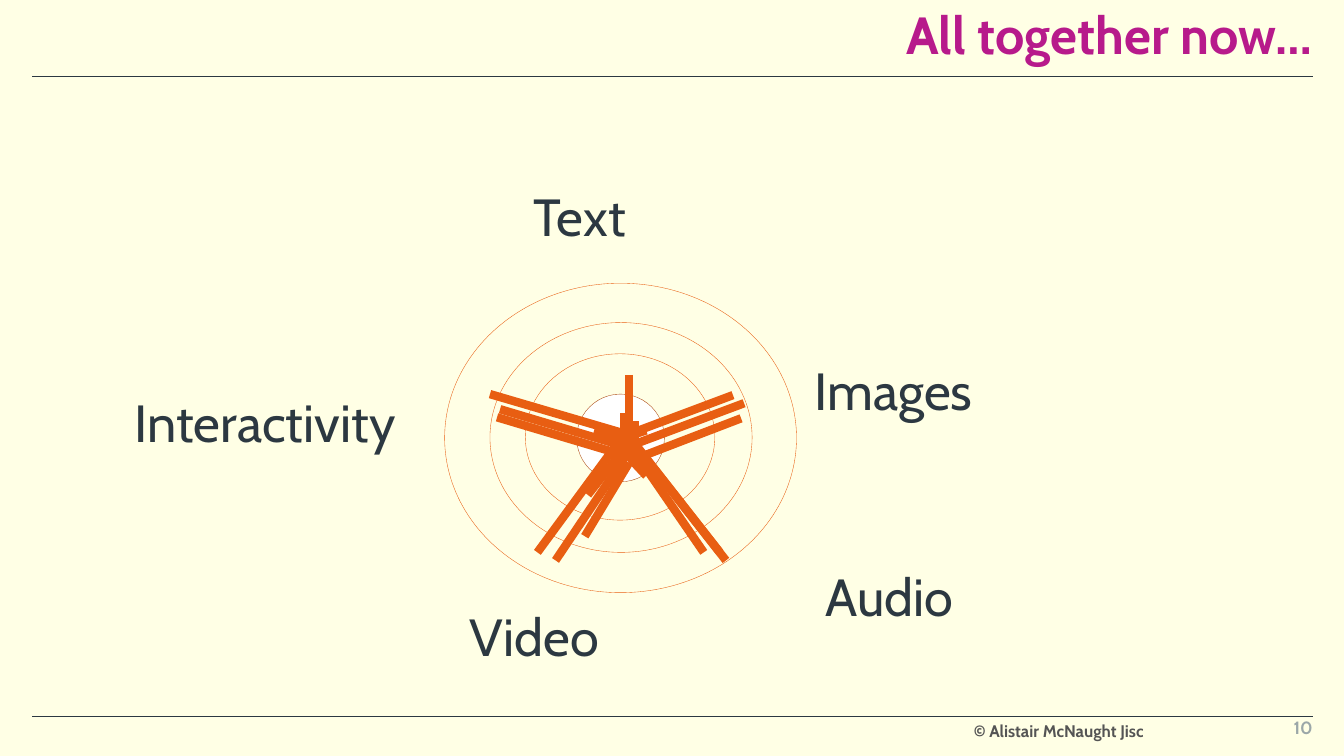
from typing import NamedTuple

from lxml import etree
from pptx import Presentation
from pptx import util as u
from pptx.dml.color import RGBColor
from pptx.enum import shapes, text
from pptx.oxml import ns

CREAM = RGBColor(0xFF, 0xFF, 0xE5)
SLATE = RGBColor(0x2C, 0x38, 0x41)
MAGENTA = RGBColor(0xB7, 0x1A, 0x8B)
ORANGE = RGBColor(0xE8, 0x5E, 0x12)
RUST = RGBColor(0xAC, 0x46, 0x0D)
WHITE = RGBColor(0xFF, 0xFF, 0xFF)
GREY = RGBColor(0x9B, 0xA7, 0xA8)
DARK_GREY = RGBColor(0x54, 0x54, 0x54)
FONT = "Cabin"


class Ring(NamedTuple):
    left: float
    top: float
    width: float
    height: float
    line: RGBColor = ORANGE
    fill: RGBColor | None = None


class Spoke(NamedTuple):
    x1: float
    y1: float
    x2: float
    y2: float


class Label(NamedTuple):
    wording: str
    left: float
    top: float
    width: float


RINGS = [
    Ring(5.72, 3.91, 0.87, 0.87, RUST, WHITE),
    Ring(4.86, 3.2, 2.6, 2.28),
    Ring(5.21, 3.51, 1.88, 1.65),
    Ring(4.41, 2.81, 3.49, 3.07),
]

# One row per profile: images, audio, video, interactivity, text
PROFILES = [
    [Spoke(6.15, 4.34, 7.27, 3.92), Spoke(6.19, 4.33, 6.98, 5.48),
     Spoke(5.33, 5.48, 6.16, 4.35), Spoke(4.86, 3.91, 6.19, 4.3),
     Spoke(6.19, 4.1, 6.19, 4.3)],
    [Spoke(6.2, 4.34, 6.41, 4.27), Spoke(6.24, 4.33, 7.14, 5.48),
     Spoke(5.83, 4.91, 6.27, 4.35), Spoke(5.89, 4.28, 6.24, 4.38),
     Spoke(6.24, 3.72, 6.24, 4.3)],
    [Spoke(6.26, 4.42, 7.38, 4), Spoke(6.3, 4.41, 7.2, 5.56),
     Spoke(5.51, 5.56, 6.27, 4.43), Spoke(4.96, 4.06, 6.3, 4.46),
     Spoke(6.3, 4.18, 6.3, 4.38)],
    [Spoke(6.23, 4.58, 7.35, 4.15), Spoke(6.27, 4.57, 6.41, 4.72),
     Spoke(5.8, 5.32, 6.24, 4.59), Spoke(4.93, 4.14, 6.27, 4.54),
     Spoke(6.27, 4.34, 6.27, 4.54)],
]

MEDIA = [
    Label("Images", 7.98, 3.51, 2.67),
    Label("Text", 5.19, 1.78, 2.31),
    Label("Audio", 8.09, 5.55, 2.44),
    Label("Video", 4.56, 5.95, 2.51),
    Label("Interactivity", 1.24, 3.82, 3.17),
]


def add_text(slide, wording: str, left: float, top: float, width: float,
             height: float, *, size: float = 37.3, color: RGBColor = SLATE,
             bold: bool = False, align=text.PP_ALIGN.LEFT,
             anchor=text.MSO_ANCHOR.TOP, inset: bool = True,
             wrap: bool = True, spacing: float = 1.0) -> None:
    box = slide.shapes.add_textbox(u.Inches(left), u.Inches(top),
                                   u.Inches(width), u.Inches(height))
    frame = box.text_frame
    frame.word_wrap = wrap
    frame.vertical_anchor = anchor
    if not inset:
        frame.margin_left = frame.margin_right = 0
        frame.margin_top = frame.margin_bottom = 0
    paragraph = frame.paragraphs[0]
    paragraph.alignment = align
    paragraph.line_spacing = spacing
    run = paragraph.add_run()
    run.text = wording
    run.font.name = FONT
    run.font.size = u.Pt(size)
    run.font.bold = bold
    run.font.color.rgb = color


def add_line(slide, spoke: Spoke, color: RGBColor, weight: float) -> None:
    line = slide.shapes.add_connector(
        shapes.MSO_CONNECTOR.STRAIGHT, *(u.Inches(value) for value in spoke))
    line.line.color.rgb = color
    line.line.width = u.Pt(weight)
    etree.SubElement(line._element.spPr, ns.qn("a:effectLst"))


def add_ring(slide, ring: Ring) -> None:
    ellipse = slide.shapes.add_shape(
        shapes.MSO_SHAPE.OVAL, u.Inches(ring.left), u.Inches(ring.top),
        u.Inches(ring.width), u.Inches(ring.height))
    ellipse.shadow.inherit = False
    if ring.fill is None:
        ellipse.fill.background()
    else:
        ellipse.fill.solid()
        ellipse.fill.fore_color.rgb = ring.fill
    ellipse.line.color.rgb = ring.line
    ellipse.line.width = u.Pt(0.25)


def main() -> None:
    deck = Presentation()
    deck.slide_width = u.Inches(13.33)
    deck.slide_height = u.Inches(7.5)
    slide = deck.slides.add_slide(deck.slide_layouts[6])
    slide.background.fill.solid()
    slide.background.fill.fore_color.rgb = CREAM

    # Rules, page number and title
    for rule_y in (0.76, 7.11):
        add_line(slide, Spoke(0.32, rule_y, 13.02, rule_y), SLATE, 0.5)
    add_text(slide, "10", 11.97, 7.11, 1.05, 0.24, size=12.7, color=GREY,
             bold=True, align=text.PP_ALIGN.RIGHT, inset=False)
    add_text(slide, "All together now…", 4.04, 0, 8.98, 0.65, color=MAGENTA,
             bold=True, align=text.PP_ALIGN.RIGHT,
             anchor=text.MSO_ANCHOR.BOTTOM, inset=False, spacing=0.9)

    # Radar: rings, then spokes
    for ring in RINGS:
        add_ring(slide, ring)
    for profile in PROFILES:
        for spoke in profile:
            add_line(slide, spoke, ORANGE, 6)

    # Media names and copyright
    for label in MEDIA:
        add_text(slide, label.wording, label.left, label.top, label.width, 0.73)
    add_text(slide, "© Alistair McNaught Jisc", 9.56, 7.1, 1.91, 0.3, size=12,
             color=DARK_GREY, bold=True, wrap=False)

    deck.save("out.pptx")


if __name__ == "__main__":
    main()
